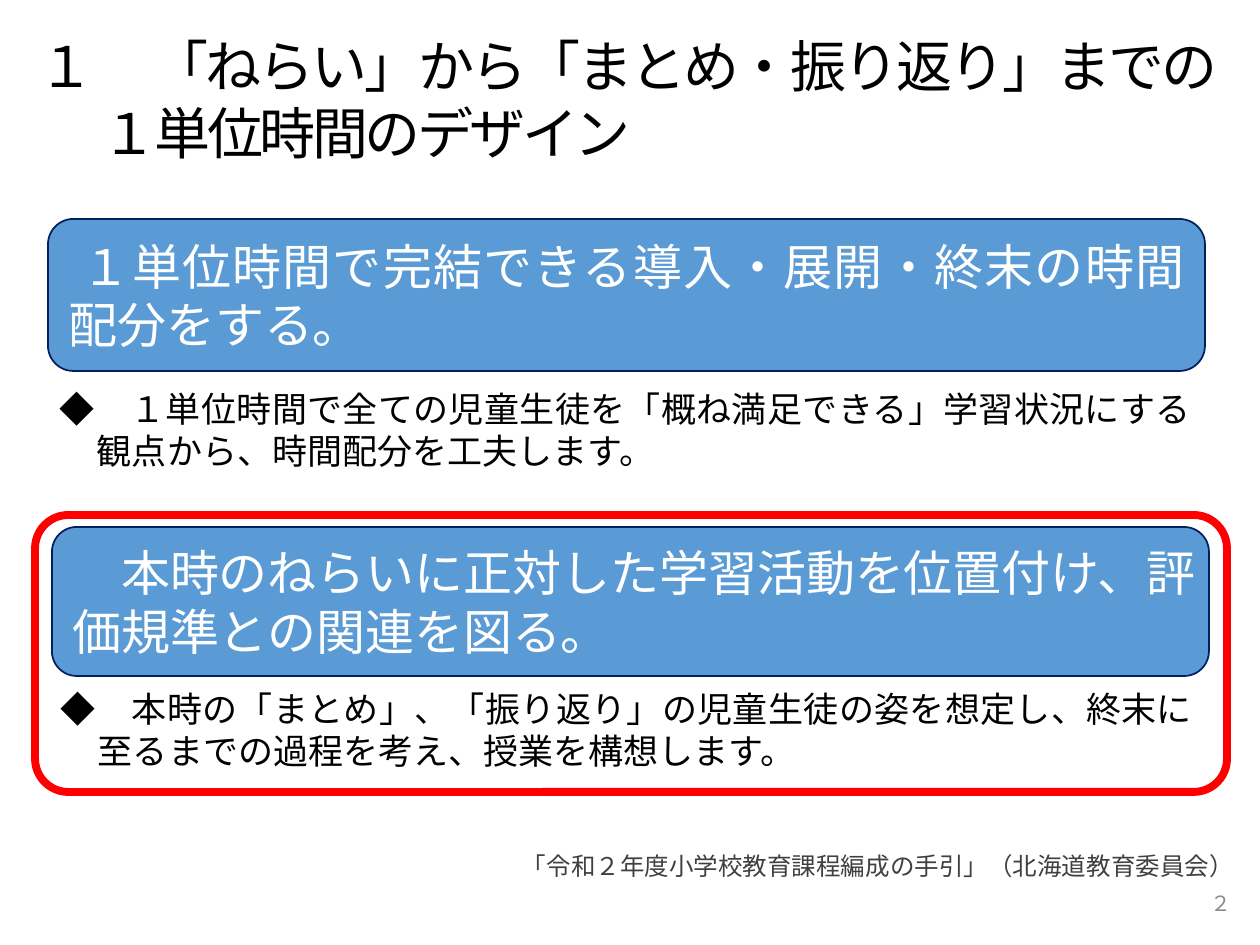
import pptx
import pptx.dml.color
import pptx.enum.lang
import pptx.enum.shapes
import pptx.enum.text
import pptx.oxml.ns
import pptx.util

ALIGN = pptx.enum.text.PP_ALIGN
ANCHOR = pptx.enum.text.MSO_ANCHOR
ROUNDED = pptx.enum.shapes.MSO_SHAPE.ROUNDED_RECTANGLE

WIDTH, HEIGHT = 1260, 945
PX = 914400 / 126
FONT = "Noto Sans CJK JP"
LEADING = 1.2
COLORS = {
    "text": "000000",
    "white": "FFFFFF",
    "box": "5B9BD5",
    "box_line": "002060",
    "frame": "FF0000",
    "source": "404040",
    "number": "8C8C8C",
}


def px(n):
    return pptx.util.Emu(round(n * PX))


def rgb(name):
    return pptx.dml.color.RGBColor.from_string(COLORS[name])


class Deck:
    def __init__(self):
        self.prs = pptx.Presentation()
        self.prs.slide_width, self.prs.slide_height = px(WIDTH), px(HEIGHT)
        self.s = self.prs.slides.add_slide(self.prs.slide_layouts[6])

    def set_text(self, sp, runs, size, color, align=ALIGN.JUSTIFY,
                 anchor=ANCHOR.TOP, indent=0, hanging=0, right_inset=13):
        """Fill a shape with one paragraph of (text, letter spacing) runs."""
        tf = sp.text_frame
        frame = {
            "word_wrap": True,
            "vertical_anchor": anchor,
            "margin_left": px(13),
            "margin_right": px(right_inset),
            "margin_top": px(6),
            "margin_bottom": px(6),
        }
        for key, value in frame.items():
            setattr(tf, key, value)
        p = tf.paragraphs[0]
        p.alignment = align
        p.line_spacing = pptx.util.Pt(size * LEADING)
        pPr = p._p.get_or_add_pPr()
        pPr.set("marL", str(px(indent)))
        pPr.set("indent", str(px(-hanging)))
        style = {
            "name": FONT,
            "size": pptx.util.Pt(size),
            "language_id": pptx.enum.lang.MSO_LANGUAGE_ID.JAPANESE,
        }
        for text, spacing in runs:
            r = p.add_run()
            r.text = text
            for key, value in style.items():
                setattr(r.font, key, value)
            r.font.color.rgb = rgb(color)
            rPr = r._r.get_or_add_rPr()
            ea = rPr.makeelement(pptx.oxml.ns.qn("a:ea"), {"typeface": FONT})
            rPr.find(pptx.oxml.ns.qn("a:latin")).addnext(ea)
            if spacing:
                rPr.set("spc", str(spacing * 100))

    def text(self, box, runs, size, color="text", **layout):
        sp = self.s.shapes.add_textbox(*map(px, box))
        self.set_text(sp, runs, size, color, **layout)

    def rounded(self, box, line, width, fill=None, radius=None):
        sp = self.s.shapes.add_shape(ROUNDED, *map(px, box))
        sp.shadow.inherit = False
        if fill:
            sp.fill.solid()
            sp.fill.fore_color.rgb = rgb(fill)
        else:
            sp.fill.background()
        sp.line.color.rgb = rgb(line)
        sp.line.width = pptx.util.Pt(width)
        if radius:
            sp.adjustments[0] = radius
        return sp

    def heading(self, box, text, **layout):
        sp = self.rounded(box, "box_line", 1, fill="box")
        self.set_text(sp, [(text, 0)], 28, "white", anchor=ANCHOR.MIDDLE, **layout)

    def point(self, box, text):
        self.text(box, [("◆　" + text, 0)], 20, indent=37, hanging=37)


def main():
    deck = Deck()
    deck.text((25, 25, 1202, 158),
              [("１　", 0),
               ("「ねらい」から「まとめ・振り返り」までの１単位時間のデザイン", -2)],
              32, indent=64, hanging=63)

    deck.heading((48, 219, 1157, 152),
                 " １単位時間で完結できる導入・展開・終末の時間配分をする。")
    deck.point((47, 381, 1157, 97),
               "１単位時間で全ての児童生徒を「概ね満足できる」学習状況にする"
               "観点から、時間配分を工夫します。")

    deck.heading((52, 527, 1157, 149),
                 "　本時のねらいに正対した学習活動を位置付け、評価規準との関連を図る。",
                 align=ALIGN.LEFT, right_inset=0)
    deck.point((48, 682, 1157, 115),
               "本時の「まとめ」、「振り返り」の児童生徒の姿を想定し、終末に"
               "至るまでの過程を考え、授業を構想します。")
    deck.rounded((35, 515, 1192, 277), "frame", 4.5, radius=0.12)

    deck.text((503, 845, 757, 35),
              [("「令和２年度小学校教育課程編成の手引」（北海道教育委員会）", 0)],
              14, "source", align=ALIGN.LEFT, indent=6)
    deck.text((960, 878, 284, 50), [("２", 0)], 12, "number",
              align=ALIGN.RIGHT, anchor=ANCHOR.MIDDLE)
    deck.prs.save("out.pptx")


if __name__ == "__main__":
    main()
